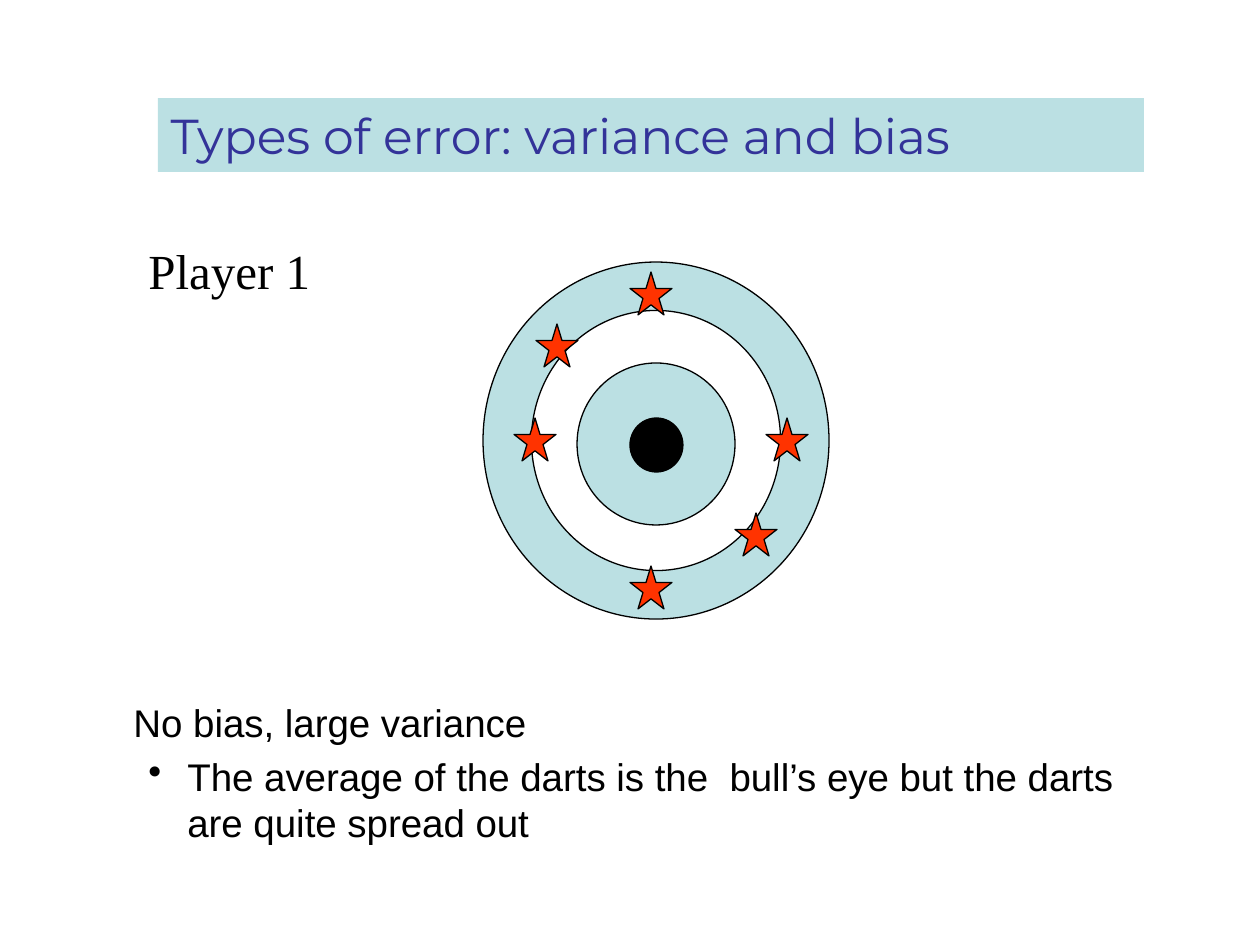
from dataclasses import dataclass

from lxml import etree
from pptx import Presentation
from pptx import util as u
from pptx.dml.color import RGBColor
from pptx.enum import shapes, text
from pptx.oxml.ns import qn

TITLE = "Types of error: variance and bias"
PLAYER = "Player 1"
SUMMARY = [
    {"words": "No bias, large variance", "margin": 48, "hang": 0, "bullet": None},
    {"words": "The average of the darts is the  bull’s eye but the darts are quite spread out",
     "margin": 102, "hang": 39, "bullet": "•"},
]
TITLE_AREA = (158, 98, 986, 74)
PLAYER_AREA = (136, 234, 198, 72)
SUMMARY_AREA = (73, 693, 1061, 136)
OUTER_RING = (483, 262, 346, 357)
INNER_DISC = (577, 363, 158, 162)
BULLSEYE = (630, 418, 53, 54)
RING_SHARE = 0.14
DART_SIZE = (42, 43)
DARTS = [(630, 566), (766, 418), (536, 324), (514, 418), (735, 513), (630, 272)]


@dataclass(frozen=True)
class Theme:
    pale: RGBColor = RGBColor(0xBB, 0xE0, 0xE3)
    title: RGBColor = RGBColor(0x33, 0x33, 0x99)
    dart: RGBColor = RGBColor(0xFF, 0x33, 0x00)
    ink: RGBColor = RGBColor(0, 0, 0)
    title_font: str = "Montserrat"
    player_font: str = "Times New Roman"
    summary_font: str = "Arial"
    large: int = 28
    medium: int = 22
    outline: float = 0.75


THEME = Theme()


def px(length):
    return u.Emu(round(length * 914400 / 126))


def add_span(para, words, font, size, color):
    span = para.add_run()
    span.text = words
    span.font.name = font
    span.font.size = u.Pt(size)
    span.font.color.rgb = color


def add_figure(page, kind, area, color):
    figure = page.shapes.add_shape(kind, *map(px, area))
    figure.shadow.inherit = False
    figure.fill.solid()
    figure.fill.fore_color.rgb = color
    figure.line.color.rgb = THEME.ink
    figure.line.width = u.Pt(THEME.outline)
    return figure


def add_title(page):
    title = page.shapes.title
    title.left, title.top, title.width, title.height = map(px, TITLE_AREA)
    title.fill.solid()
    title.fill.fore_color.rgb = THEME.pale
    frame = title.text_frame
    frame.auto_size = text.MSO_AUTO_SIZE.NONE
    frame.vertical_anchor = text.MSO_ANCHOR.MIDDLE
    para = frame.paragraphs[0]
    para.alignment = text.PP_ALIGN.LEFT
    para.line_spacing = 1.0
    add_span(para, TITLE, THEME.title_font, THEME.large, THEME.title)


def add_target(page):
    kinds = shapes.MSO_SHAPE
    ring = add_figure(page, kinds.DONUT, OUTER_RING, THEME.pale)
    ring.adjustments[0] = RING_SHARE
    add_figure(page, kinds.OVAL, INNER_DISC, THEME.pale)
    add_figure(page, kinds.OVAL, BULLSEYE, THEME.ink)
    for corner in DARTS:
        add_figure(page, kinds.STAR_5_POINT, corner + DART_SIZE, THEME.dart)


def add_summary(page):
    frame = page.shapes.add_textbox(*map(px, SUMMARY_AREA)).text_frame
    frame.word_wrap = True
    for index, item in enumerate(SUMMARY):
        para = frame.add_paragraph() if index else frame.paragraphs[0]
        para.space_before = u.Pt(0.2 * THEME.medium)
        add_span(para, item["words"], THEME.summary_font, THEME.medium, THEME.ink)
        layout = para._p.get_or_add_pPr()
        layout.set("marL", str(px(item["margin"])))
        layout.set("indent", str(-px(item["hang"])))
        if item["bullet"]:
            etree.SubElement(layout, qn("a:buChar")).set("char", item["bullet"])


def add_player(page):
    frame = page.shapes.add_textbox(*map(px, PLAYER_AREA)).text_frame
    frame.word_wrap = False
    frame.auto_size = text.MSO_AUTO_SIZE.SHAPE_TO_FIT_TEXT
    add_span(frame.paragraphs[0], PLAYER, THEME.player_font, THEME.large, THEME.ink)


def main():
    deck = Presentation()
    deck.slide_width, deck.slide_height = px(1260), px(945)
    page = deck.slides.add_slide(deck.slide_layouts[5])
    add_title(page)
    add_target(page)
    add_summary(page)
    add_player(page)
    deck.save("out.pptx")


if __name__ == "__main__":
    main()
